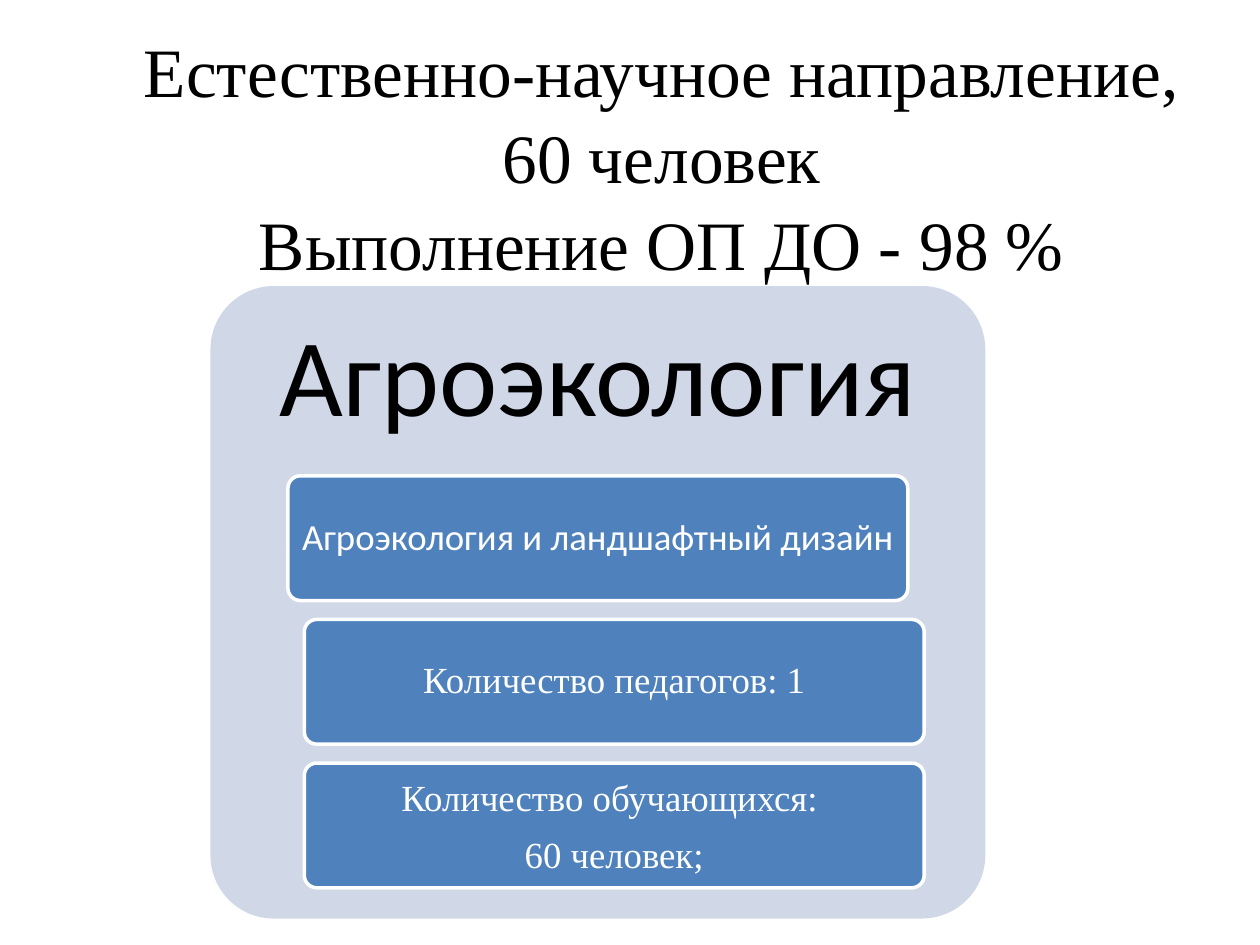
from pptx import Presentation
from pptx.dml.color import RGBColor
from pptx.enum.shapes import MSO_SHAPE
from pptx.enum.text import MSO_ANCHOR, MSO_AUTO_SIZE, PP_ALIGN
from pptx.util import Inches, Pt

# Content
TITLE = "Естественно-научное направление, 60 человек\vВыполнение ОП ДО - 98 %"
HEADING = "Агроэкология"
SERIF, SANS = "Times New Roman", "Calibri"
# Each card: paragraphs, font, line spacing, shift to the right
CARDS = [
    (["Агроэкология и ландшафтный дизайн"], SANS, 0.9, 0),
    (["Количество педагогов: 1"], SERIF, 0.9, 0.13),
    (["Количество обучающихся: ", "60 человек;"], SERIF, 1, 0.13),
]

# Layout in inches: the panel is split into a heading band and card rows
PANEL_LEFT, PANEL_TOP, PANEL_WIDTH, PANEL_HEIGHT = 1.67, 2.27, 6.15, 5.02
HEADING_HEIGHT = PANEL_HEIGHT * 0.3
CARD_WIDTH, CARD_HEIGHT, ROW_STEP = PANEL_WIDTH * 0.8, 0.99, 1.14


def color(value):
    return RGBColor.from_string(value)


def place(shape, left, top, width, height):
    shape.left, shape.top = Inches(left), Inches(top)
    shape.width, shape.height = Inches(width), Inches(height)


def write(shape, lines, font, size, ink, spacing, inset_x, inset_y, gap=0.35):
    frame = shape.text_frame
    frame.word_wrap = True
    frame.auto_size = MSO_AUTO_SIZE.NONE
    frame.vertical_anchor = MSO_ANCHOR.MIDDLE
    frame.margin_left = frame.margin_right = Inches(inset_x)
    frame.margin_top = frame.margin_bottom = Inches(inset_y)
    frame.text = "\n".join(lines)
    for para in frame.paragraphs:
        para.alignment = PP_ALIGN.CENTER
        para.line_spacing = spacing
        para.space_before = Pt(0)
        para.space_after = Pt(size * gap)
        para.font.name, para.font.size = font, Pt(size)
        para.font.color.rgb = color(ink)


def add_round_box(page, left, top, width, height, fill):
    box = page.shapes.add_shape(
        MSO_SHAPE.ROUNDED_RECTANGLE,
        Inches(left), Inches(top), Inches(width), Inches(height))
    box.adjustments[0] = 0.1
    box.shadow.inherit = False
    box.fill.solid()
    box.fill.fore_color.rgb = color(fill)
    box.line.fill.background()
    return box


deck = Presentation()
deck.slide_width, deck.slide_height = Inches(10), Inches(7.5)
page = deck.slides.add_slide(deck.slide_layouts[5])

# Title
title = page.shapes.title
place(title, 0.75, 0.6, 9, 1.25)
write(title, [TITLE], SERIF, 39.6, "000000", 1.04, 0.1, 0.05, gap=0)

# Panel and its heading
add_round_box(page, PANEL_LEFT, PANEL_TOP, PANEL_WIDTH, PANEL_HEIGHT, "D0D8E8")
heading = page.shapes.add_textbox(0, 0, 0, 0)
place(heading, PANEL_LEFT, PANEL_TOP, PANEL_WIDTH, HEADING_HEIGHT)
write(heading, [HEADING], SANS, 63, "000000", 0.9, 0.26, 0.26)

# Cards
card_left = PANEL_LEFT + (PANEL_WIDTH - CARD_WIDTH) / 2
for row, (lines, font, spacing, shift) in enumerate(CARDS):
    top = PANEL_TOP + HEADING_HEIGHT + row * ROW_STEP
    card = add_round_box(page, card_left + shift, top, CARD_WIDTH, CARD_HEIGHT, "4F81BD")
    card.line.color.rgb = color("FFFFFF")
    card.line.width = Pt(2)
    write(card, lines, font, 21, "FFFFFF", spacing, 0.06, 0.04)

deck.save("out.pptx")
